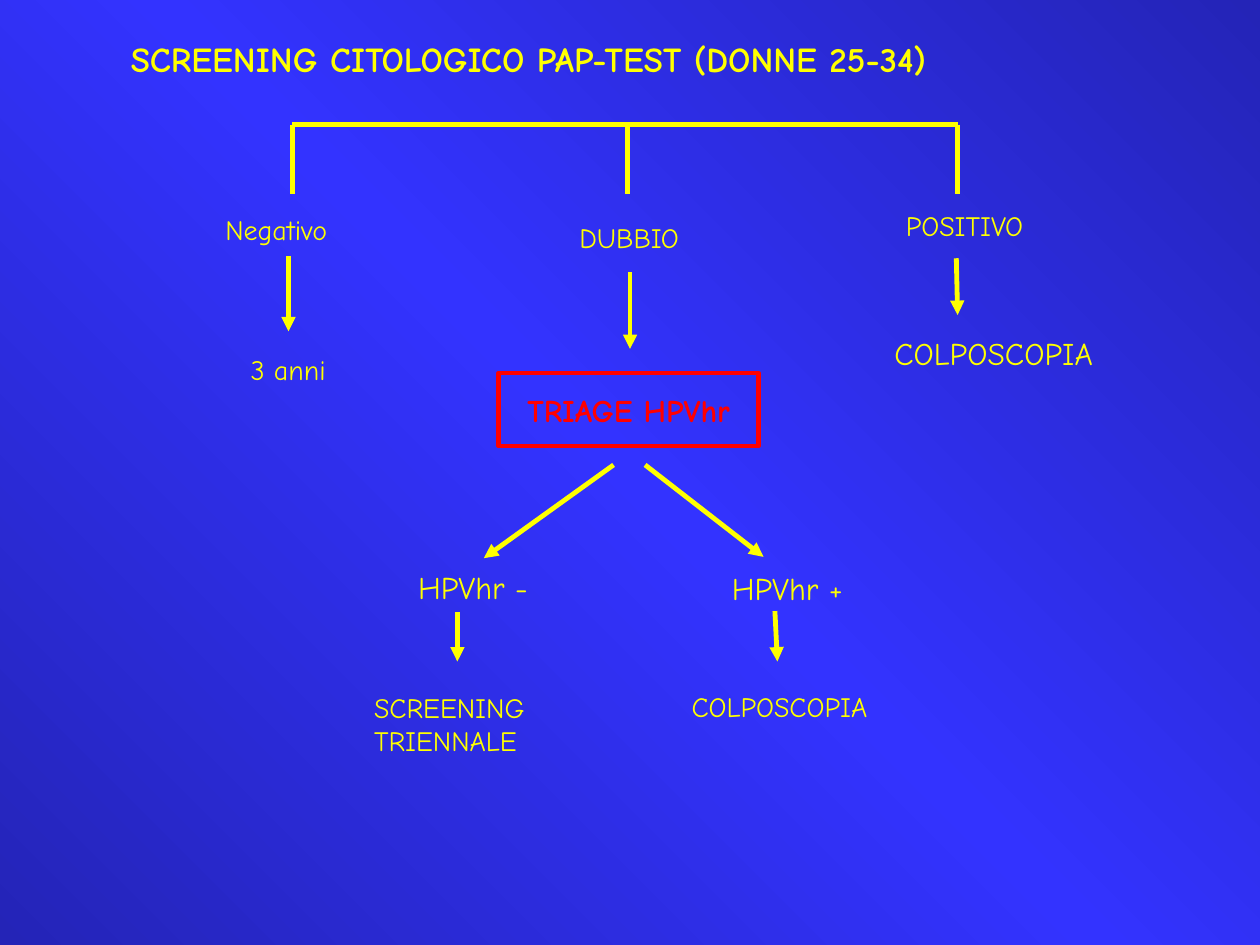
import copy
import pptx
import pptx.util
import pptx.dml.color
import pptx.enum.shapes
import pptx.enum.text
import pptx.oxml
import pptx.oxml.ns
from pptx.util import Inches

YELLOW, RED, BLUE = "FFFF00", "FF0000", "3333FF"


def paint(code):
    return pptx.dml.color.RGBColor.from_string(code)


class Chart:
    font = "Comic Neue"
    width = pptx.util.Pt(2.75)

    def __init__(self, slide):
        self.slide = slide

    def ground(self, color, shade):
        """Diagonal gradient, shaded at both ends."""
        fill = self.slide.background.fill
        fill.gradient()
        fill.gradient_angle = 45
        for stop in fill.gradient_stops:
            stop.color.rgb = paint(color)
        qn = pptx.oxml.ns.qn
        stops = next(self.slide.element.iter(qn("a:gsLst")))
        mid = copy.deepcopy(stops[0])
        mid.set("pos", "50000")
        for stop, pos in zip(stops, ("0", "100000")):
            stop.set("pos", pos)
            tone = pptx.oxml.parse_xml(
                f'<a:shade {pptx.oxml.ns.nsdecls("a")} val="{shade}"/>')
            stop[0].append(tone)
        stops.insert(1, mid)

    def words(self, frame, text, size, color, bold=False, align=None):
        frame.text = text
        frame.word_wrap = False
        for para in frame.paragraphs:
            para.alignment = align
            for run in para.runs:
                run.font.name = self.font
                run.font.size = pptx.util.Pt(size)
                run.font.bold = bold
                run.font.color.rgb = paint(color)

    def label(self, text, x, y, w, h, size=16, bold=False):
        box = self.slide.shapes.add_textbox(*map(Inches, (x, y, w, h)))
        self.words(box.text_frame, text, size, YELLOW, bold)
        box.text_frame.auto_size = pptx.enum.text.MSO_AUTO_SIZE.SHAPE_TO_FIT_TEXT

    def frame(self, text, x, y, w, h, color):
        box = self.slide.shapes.add_shape(
            pptx.enum.shapes.MSO_SHAPE.RECTANGLE, *map(Inches, (x, y, w, h)))
        box.shadow.inherit = False
        box.fill.background()
        box.line.color.rgb = paint(color)
        box.line.width = self.width
        box.text_frame.vertical_anchor = pptx.enum.text.MSO_ANCHOR.MIDDLE
        self.words(box.text_frame, text, 18, color, True,
                   pptx.enum.text.PP_ALIGN.CENTER)

    def line(self, x1, y1, x2, y2, arrow=False):
        link = self.slide.shapes.add_connector(
            pptx.enum.shapes.MSO_CONNECTOR.STRAIGHT,
            *map(Inches, (x1, y1, x2, y2)))
        link.line.color.rgb = paint(YELLOW)
        link.line.width = self.width
        props = link.element.spPr
        names = pptx.oxml.ns.nsdecls("a")
        if arrow:
            props.find(pptx.oxml.ns.qn("a:ln")).append(
                pptx.oxml.parse_xml(f'<a:tailEnd {names} type="triangle"/>'))
        props.append(pptx.oxml.parse_xml(f"<a:effectLst {names}/>"))


def main():
    deck = pptx.Presentation()
    deck.slide_width, deck.slide_height = Inches(10), Inches(7.5)
    flow = Chart(deck.slides.add_slide(deck.slide_layouts[6]))
    flow.ground(BLUE, 47000)

    # Title
    flow.label("SCREENING CITOLOGICO PAP-TEST (DONNE 25-34)",
               0.94, 0.25, 7.93, 0.44, 20, True)

    # Bracket with three branches
    top, foot = 0.99, 1.54
    stems = (2.32, 4.98, 7.6)
    flow.line(stems[0], top, stems[-1], top)
    for x in stems:
        flow.line(x, top, x, foot)

    # Results and what follows them
    flow.label("Negativo", 1.69, 1.64, 1.12, 0.37)
    flow.label("DUBBIO", 4.5, 1.7, 1.11, 0.37)
    flow.label("POSITIVO", 7.09, 1.61, 1.38, 0.37)
    flow.label("3 anni", 1.89, 2.75, 0.82, 0.37)
    flow.label("COLPOSCOPIA", 7, 2.6, 2.01, 0.4, 18)
    flow.frame("TRIAGE HPVhr", 3.96, 2.96, 2.06, 0.58, RED)

    # Triage outcomes
    flow.label("HPVhr -", 3.22, 4.46, 1.13, 0.4, 18)
    flow.label("HPVhr +", 5.71, 4.47, 1.15, 0.4, 18)
    flow.label("SCREENING\nTRIENNALE", 2.87, 5.43, 1.55, 0.64)
    flow.label("COLPOSCOPIA", 5.39, 5.42, 1.8, 0.37)

    # Arrows, from top to bottom
    for ends in (
        (2.29, 2.03, 2.29, 2.63),
        (5, 2.16, 5, 2.77),
        (7.59, 2.05, 7.6, 2.5),
        (4.87, 3.69, 3.84, 4.43),
        (5.12, 3.69, 6.06, 4.42),
        (3.63, 4.86, 3.63, 5.25),
        (6.15, 4.85, 6.17, 5.25),
    ):
        flow.line(*ends, arrow=True)

    deck.save("out.pptx")


if __name__ == "__main__":
    main()
